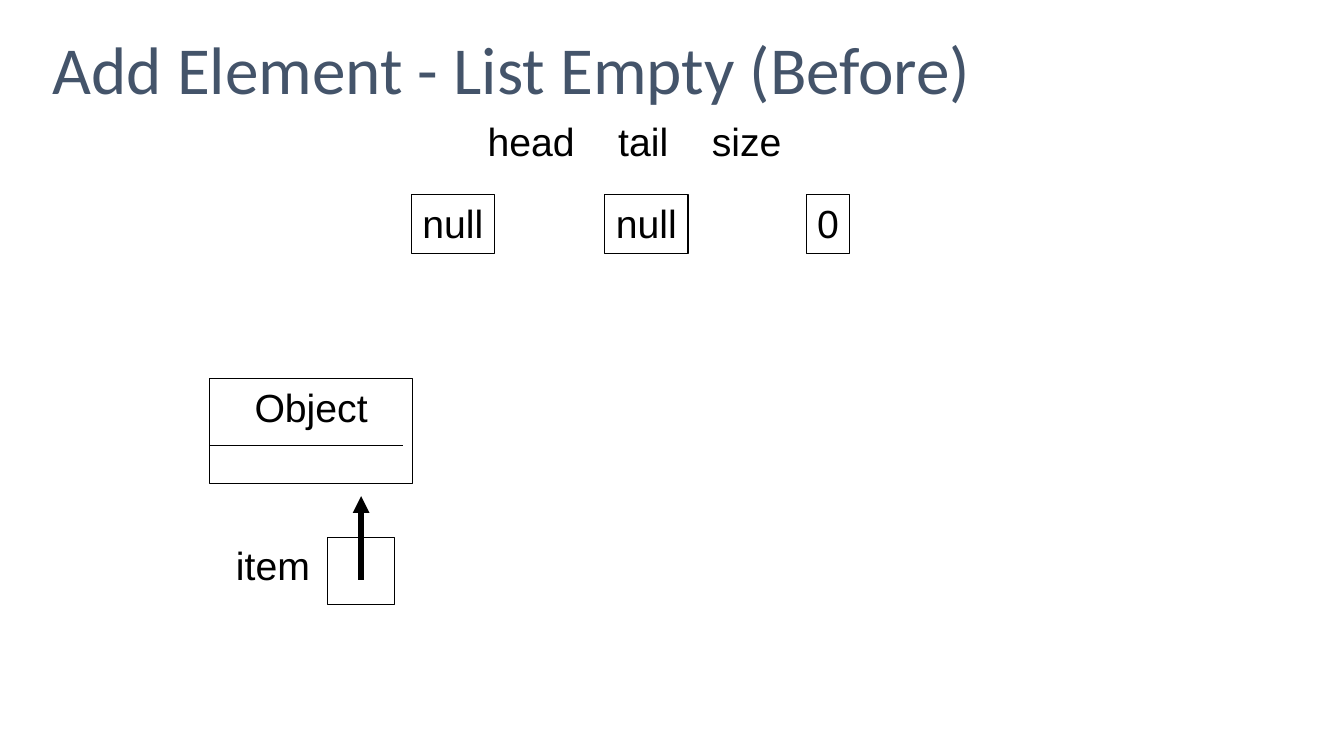
from lxml.etree import SubElement
from pptx import Presentation
from pptx.dml.color import RGBColor
from pptx.enum.shapes import MSO_CONNECTOR, MSO_SHAPE
from pptx.enum.text import MSO_ANCHOR, PP_ALIGN
from pptx.oxml.ns import qn
from pptx.util import Cm, Pt

BLACK = RGBColor(0x00, 0x00, 0x00)
SLATE = RGBColor(0x44, 0x54, 0x6A)

TITLE_FONT = {"name": "Calibri", "size": Pt(48)}
DIAGRAM_FONT = {"name": "Arial", "size": Pt(28)}


def write_text(shape, text, font, color, align, anchor=MSO_ANCHOR.TOP, wrap=True):
    frame = shape.text_frame
    frame.word_wrap = wrap
    frame.vertical_anchor = anchor
    para = frame.paragraphs[0]
    para.alignment = align
    span = para.add_run()
    span.text = text
    for name, value in font.items():
        setattr(span.font, name, value)
    span.font.color.rgb = color
    return para


def add_title(page, text):
    title = page.shapes.title
    place = {"left": Cm(1.07), "top": Cm(0), "width": Cm(31.75), "height": Cm(3.68)}
    for name, value in place.items():
        setattr(title, name, value)
    para = write_text(title, text, TITLE_FONT, SLATE, PP_ALIGN.LEFT, MSO_ANCHOR.MIDDLE)
    para.line_spacing = 0.9


def add_label(page, text, left, top, width, align, tab_stops=()):
    """Add a one-line text box; tab stops are measured from its text edge."""
    label = page.shapes.add_textbox(left, top, width, Cm(1.45))
    para = write_text(label, text, DIAGRAM_FONT, BLACK, align)
    if tab_stops:
        tab_list = SubElement(para._p.get_or_add_pPr(), qn("a:tabLst"))
        for stop in tab_stops:
            SubElement(tab_list, qn("a:tab"), pos=str(int(stop)), algn="l")


def add_box(page, left, top, width, height, text="", wrap=False):
    box = page.shapes.add_shape(MSO_SHAPE.RECTANGLE, left, top, width, height)
    box.shadow.inherit = False
    box.fill.background()
    box.line.color.rgb = BLACK
    box.line.width = Pt(0.75)
    if text:
        write_text(box, text, DIAGRAM_FONT, BLACK, PP_ALIGN.CENTER, wrap=wrap)


def add_line(page, start, end, weight, arrow=False):
    line = page.shapes.add_connector(MSO_CONNECTOR.STRAIGHT, *start, *end)
    line.line.color.rgb = BLACK
    line.line.width = weight
    if arrow:
        SubElement(line.line._get_or_add_ln(), qn("a:tailEnd"), type="triangle")
    SubElement(line._element.spPr, qn("a:effectLst"))


def add_list_fields(page):
    add_label(page, "head\ttail\tsize", Cm(12.04), Cm(2.84), Cm(9.98),
              PP_ALIGN.LEFT, (Cm(3.29), Cm(5.65)))
    fields = [(10.36, 2.1, "null"), (15.24, 2.1, "null"), (20.32, 1.1, "0")]
    for left, width, value in fields:
        add_box(page, Cm(left), Cm(4.9), Cm(width), Cm(1.48), value)


def add_item_reference(page):
    add_box(page, Cm(5.29), Cm(9.53), Cm(5.1), Cm(2.65), "Object", wrap=True)
    add_line(page, (Cm(5.29), Cm(11.22)), (Cm(10.16), Cm(11.22)), Pt(0.75))
    add_label(page, "item", Cm(5.46), Cm(13.51), Cm(2.6), PP_ALIGN.RIGHT)
    add_box(page, Cm(8.26), Cm(13.55), Cm(1.69), Cm(1.69))
    add_line(page, (Cm(9.1), Cm(14.61)), (Cm(9.1), Cm(12.5)), Pt(4), arrow=True)


def main():
    deck = Presentation()
    deck.slide_width, deck.slide_height = Cm(33.87), Cm(19.05)
    page = deck.slides.add_slide(deck.slide_layouts[5])
    add_title(page, "Add Element - List Empty (Before)")
    add_list_fields(page)
    add_item_reference(page)
    deck.save("out.pptx")


if __name__ == "__main__":
    main()
